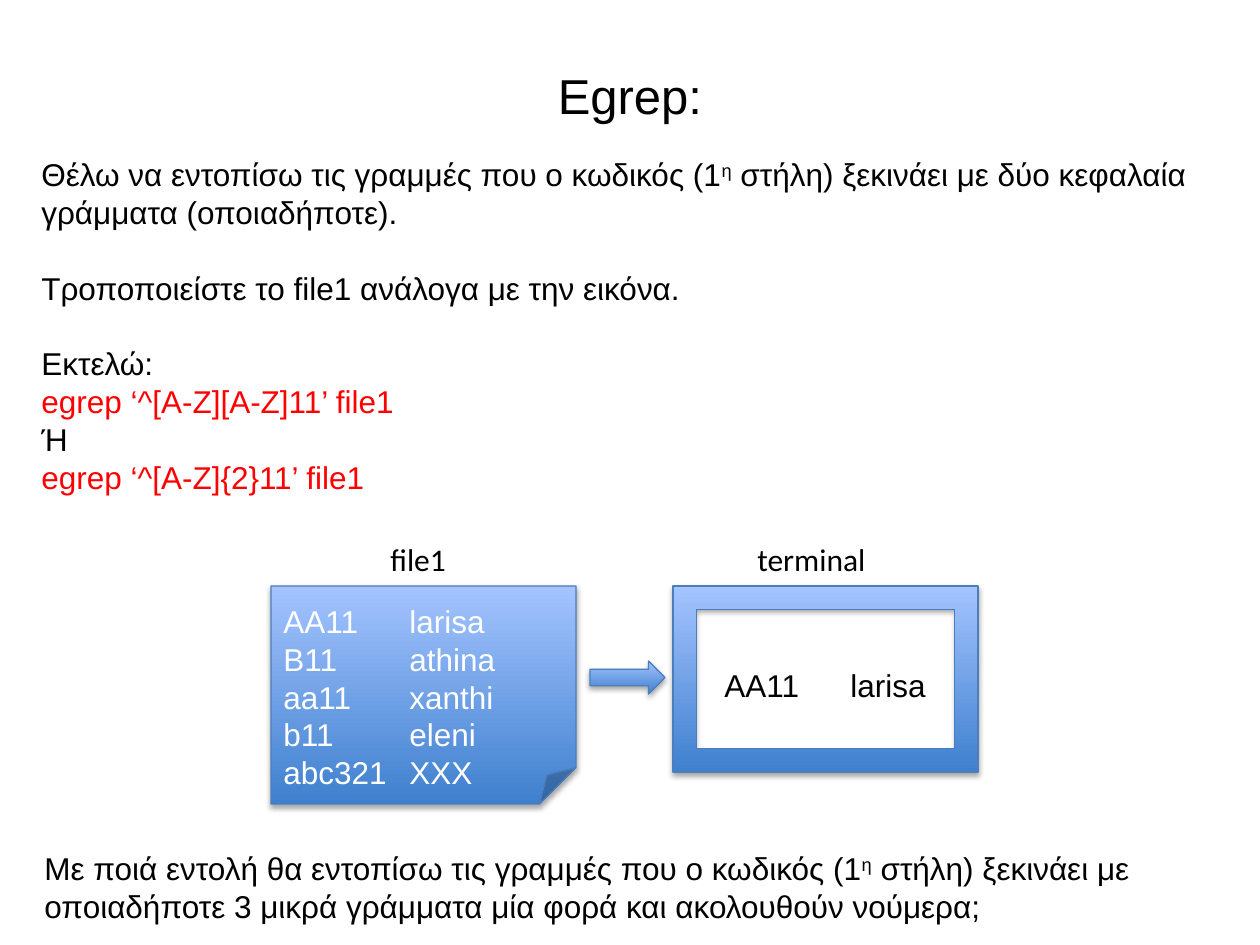
from lxml import etree
from pptx import Presentation
from pptx.dml.color import RGBColor
from pptx.enum.shapes import MSO_SHAPE
from pptx.enum.text import MSO_ANCHOR, PP_ALIGN
from pptx.oxml import parse_xml
from pptx.oxml.ns import nsdecls, qn
from pptx.util import Pt

PX = 914400 / 126
BLACK = RGBColor(0, 0, 0)
WHITE = RGBColor(255, 255, 255)
RED = RGBColor(255, 0, 0)
DARK_BLUE = RGBColor(0x3F, 0x80, 0xCE)
LIGHT_BLUE = RGBColor(0xA4, 0xC4, 0xFF)
EDGE_BLUE = RGBColor(0x4B, 0x7E, 0xBC)
SHADOW = (
    f'<a:outerShdw {nsdecls("a")} blurRad="40000" dist="23000" dir="5400000" rotWithShape="0">'
    '<a:srgbClr val="000000"><a:alpha val="35000"/></a:srgbClr></a:outerShdw>'
)


def emu(*lengths):
    return [round(n * PX) for n in lengths]


def add_lines(tf, lines, color=BLACK, font="Arial", size=18, align=PP_ALIGN.LEFT):
    for i, line in enumerate(lines):
        p = tf.paragraphs[0] if i == 0 else tf.add_paragraph()
        p.alignment = align
        runs, line_color, gap = line if isinstance(line, tuple) else ([line], color, 0)
        if gap:
            p.space_before = Pt(gap)
        if "\t" in runs[0]:
            tabs = etree.SubElement(p._p.get_or_add_pPr(), qn("a:tabLst"))
            etree.SubElement(tabs, qn("a:tab"), pos="914400", algn="l")
        for text in runs:
            r = p.add_run()
            r.text = text
            for name, value in {"name": font, "size": Pt(size)}.items():
                setattr(r.font, name, value)
            r.font.color.rgb = line_color
            if text == "η":
                r._r.get_or_add_rPr().set("baseline", "30000")


prs = Presentation()
prs.slide_width, prs.slide_height = emu(1260, 945)
s = prs.slides.add_slide(prs.slide_layouts[6])

task = [
    (["Θέλω να εντοπίσω τις γραμμές που ο κωδικός (1", "η",
      " στήλη) ξεκινάει με δύο κεφαλαία γράμματα (οποιαδήποτε)."], BLACK, 0),
    (["Τροποποιείστε το file1 ανάλογα με την εικόνα."], BLACK, 21.6),
    (["Εκτελώ:"], BLACK, 21.6),
    (["egrep ‘^[A-Z][Α-Ζ]11’ file1"], RED, 0),
    "Ή",
    (["egrep ‘^[A-Z]{2}11’ file1"], RED, 0),
]
question = [
    (["Με ποιά εντολή θα εντοπίσω τις γραμμές που ο κωδικός (1", "η",
      " στήλη) ξεκινάει με οποιαδήποτε 3 μικρά γράμματα μία φορά και ακολουθούν νούμερα;"],
     BLACK, 0),
]
file_rows = ["AA11\tlarisa", "B11\tathina", "aa11\txanthi", "b11\teleni", "abc321\tXXX"]

diagram = {}
for name, kind, box in [
    ("file", MSO_SHAPE.FOLDED_CORNER, (271, 586, 305, 218)),
    ("arrow", MSO_SHAPE.RIGHT_ARROW, (590, 661, 75, 33)),
    ("terminal", MSO_SHAPE.FRAME, (673, 586, 305, 186)),
]:
    sp = s.shapes.add_shape(kind, *emu(*box))
    sp.fill.gradient()
    sp.fill.gradient_angle = 90
    for stop, color in zip(sp.fill.gradient_stops, (DARK_BLUE, LIGHT_BLUE)):
        stop.color.rgb = color
    sp.line.color.rgb = EDGE_BLUE
    sp.line.width = Pt(0.75)
    sp.shadow.inherit = False
    sp._element.spPr.find(qn("a:effectLst")).append(parse_xml(SHADOW))
    diagram[name] = sp

tf = diagram["file"].text_frame
for name, value in {"word_wrap": True, "vertical_anchor": MSO_ANCHOR.TOP,
                    "margin_top": round(16 * PX)}.items():
    setattr(tf, name, value)
add_lines(tf, file_rows, color=WHITE)

for box, lines, wrap, style in [
    ((63, 58, 1134, 74), ["Egrep:"], True, {"size": 28, "align": PP_ALIGN.CENTER}),
    ((29, 149, 1196, 357), task, True, {}),
    ((378, 534, 82, 50), ["file1"], False, {"font": "Calibri"}),
    ((745, 534, 135, 50), ["terminal"], False, {"font": "Calibri"}),
    ((712, 660, 248, 50), ["AA11\tlarisa"], True, {}),
    ((32, 843, 1193, 89), question, True, {}),
]:
    tf = s.shapes.add_textbox(*emu(*box)).text_frame
    tf.word_wrap = wrap
    tf.vertical_anchor = MSO_ANCHOR.MIDDLE if lines == ["Egrep:"] else MSO_ANCHOR.TOP
    add_lines(tf, lines, **style)

prs.save("out.pptx")
